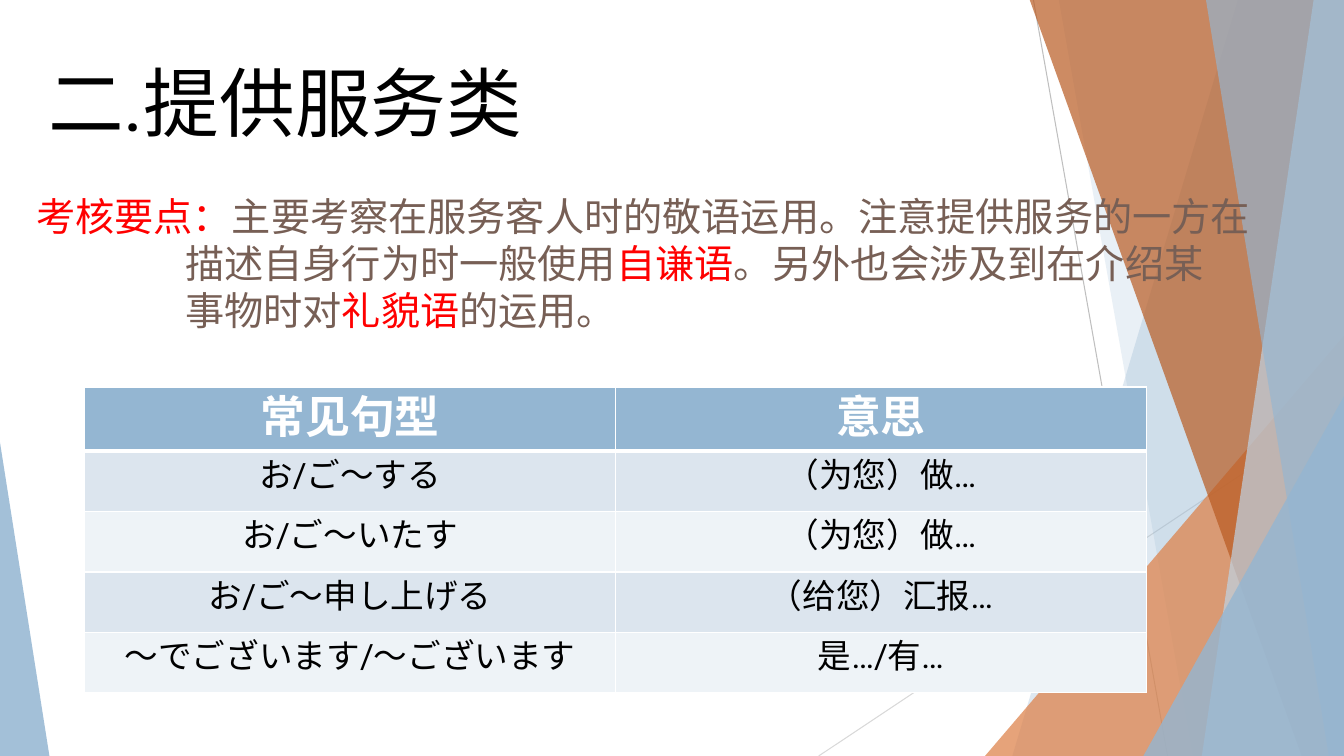
import pptx
import pptx.util
import pptx.dml.color
import pptx.enum.shapes
import pptx.enum.text
import pptx.oxml
import pptx.oxml.ns
import lxml.etree

Inches = pptx.util.Inches
Pt = pptx.util.Pt
RGBColor = pptx.dml.color.RGBColor
qn = pptx.oxml.ns.qn

WIDTH, HEIGHT, TOP = 13.33, 7.5, -0.01
FONT = "Roboto"
WHITE = RGBColor(0xFF, 0xFF, 0xFF)
BLACK = RGBColor(0, 0, 0)
RED = RGBColor(0xFF, 0, 0)
BROWN = RGBColor(0x77, 0x5F, 0x55)
BLUE = RGBColor(0x94, 0xB6, 0xD2)
PALE_BLUE = RGBColor(0xBF, 0xD3, 0xE4)
ORANGE = RGBColor(0xDD, 0x80, 0x47)
RUST = RGBColor(0xB9, 0x5B, 0x22)
GREY = RGBColor(0xBF, 0xBF, 0xBF)
LIGHT_GREY = RGBColor(0xD9, 0xD9, 0xD9)
BANDS = [RGBColor(0xDC, 0xE5, 0xEE), RGBColor(0xEE, 0xF3, 0xF7)]

# Content
TITLE = "二.提供服务类"
# Each line: left indent, then (text, colour) parts
KEY_POINTS = [
    (0, [("考核要点：", RED), ("主要考察在服务客人时的敬语运用。注意提供服务的一方在", BROWN)]),
    (1.48, [("描述自身行为时一般使用", BROWN), ("自谦语", RED),
            ("。另外也会涉及到在介绍某", BROWN)]),
    (1.48, [("事物时对", BROWN), ("礼貌语", RED), ("的运用。", BROWN)]),
]
PATTERNS = [
    ("常见句型", "意思"),
    ("お/ご～する", "（为您）做…"),
    ("お/ご～いたす", "（为您）做…"),
    ("お/ご～申し上げる", "（给您）汇报…"),
    ("～でございます/～ございます", "是…/有…"),
]

# Decoration: lines, bands to the right edge (top x, bottom x), corner triangles
LINES = [(10.25, 0, 11.58, HEIGHT, GREY), (WIDTH, 4.03, 8.12, HEIGHT, LIGHT_GREY)]
BACK_BANDS = [(12.28, 10.04, BLUE, 30), (10.5, 11.83, BLUE, 20)]
FRONT_BANDS = [(10.21, 12.91, RUST, 70), (13.03, 11.92, PALE_BLUE, 70),
               (11.96, 13.18, BLUE, 65)]
# left, top, width, apex position, colour, opacity
BACK_TRIANGLES = [(9.77, 3.33, 3.56, 1, ORANGE, 72)]
FRONT_TRIANGLES = [(11.34, 3.93, 1.99, 1, BLUE, 80), (0, 4.39, 0.49, 0, BLUE, 85)]

deck = pptx.Presentation()
deck.slide_width, deck.slide_height = Inches(WIDTH), Inches(HEIGHT)
page = deck.slides.add_slide(deck.slide_layouts[6])


def add_span(para, text, size=24, color=BLACK, bold=False):
    span = para.add_run()
    span.text = text
    span.font.size = Pt(size)
    span.font.name = FONT
    span.font.bold = bold
    span.font.color.rgb = color
    east_asian = lxml.etree.SubElement(span.font._element, qn("a:ea"))
    east_asian.set("typeface", FONT)


def add_text_box(left, top, width, height):
    box = page.shapes.add_textbox(*map(Inches, (left, top, width, height)))
    box.text_frame.word_wrap = True
    return box.text_frame


def paint(shape, color, opacity):
    shape.shadow.inherit = False
    shape.line.fill.background()
    shape.fill.solid()
    shape.fill.fore_color.rgb = color
    for tint in shape._element.spPr.iter(qn("a:srgbClr")):
        lxml.etree.SubElement(tint, qn("a:alpha")).set("val", str(opacity * 1000))


def add_bands(bands):
    for top_x, bottom_x, color, opacity in bands:
        outline = page.shapes.build_freeform(Inches(top_x), Inches(TOP))
        corners = [(WIDTH, TOP), (WIDTH, HEIGHT), (bottom_x, HEIGHT)]
        outline.add_line_segments([(Inches(x), Inches(y)) for x, y in corners])
        paint(outline.convert_to_shape(), color, opacity)


def add_triangles(triangles):
    for left, top, width, apex, color, opacity in triangles:
        shape = page.shapes.add_shape(
            pptx.enum.shapes.MSO_SHAPE.ISOSCELES_TRIANGLE,
            *map(Inches, (left, top, width, HEIGHT - top)))
        shape.adjustments[0] = apex
        paint(shape, color, opacity)


def add_border(cell, side, weight):
    edge = lxml.etree.SubElement(cell._tc.get_or_add_tcPr(), qn("a:" + side))
    edge.set("w", str(Pt(weight)))
    fill = lxml.etree.SubElement(edge, qn("a:solidFill"))
    lxml.etree.SubElement(fill, qn("a:srgbClr")).set("val", str(WHITE))


# Background decoration
for x1, y1, x2, y2, color in LINES:
    line = page.shapes.add_connector(
        pptx.enum.shapes.MSO_CONNECTOR.STRAIGHT, *map(Inches, (x1, y1, x2, y2)))
    line.line.color.rgb = color
    line.line.width = Pt(0.75)
    lxml.etree.SubElement(line._element.spPr, qn("a:effectLst"))
add_bands(BACK_BANDS)
add_triangles(BACK_TRIANGLES)
add_bands(FRONT_BANDS)
add_triangles(FRONT_TRIANGLES)

# Title
frame = add_text_box(0.38, 0.51, 5.35, 1.01)
add_span(frame.paragraphs[0], TITLE, size=54)

# Key points
frame = add_text_box(0.26, 1.86, 12.41, 1.51)
for index, (indent, parts) in enumerate(KEY_POINTS):
    para = frame.add_paragraph() if index else frame.paragraphs[0]
    if indent:
        para._p.get_or_add_pPr().set("marL", str(Inches(indent)))
    for text, color in parts:
        add_span(para, text, size=28, color=color)

# Sentence pattern table
table = page.shapes.add_table(len(PATTERNS), 2, Inches(0.84), Inches(3.84),
                              Inches(10.53), Inches(3.02)).table
for r, texts in enumerate(PATTERNS):
    header = r == 0
    table.rows[r].height = Inches(0.62 if header else 0.6)
    for c, text in enumerate(texts):
        cell = table.cell(r, c)
        for side in ("lnL", "lnR", "lnT", "lnB"):
            thick = (r, side) in ((0, "lnB"), (1, "lnT"))
            add_border(cell, side, 3 if thick else 1)
        cell.fill.solid()
        cell.fill.fore_color.rgb = BLUE if header else BANDS[(r - 1) % 2]
        para = cell.text_frame.paragraphs[0]
        para.alignment = pptx.enum.text.PP_ALIGN.CENTER
        add_span(para, text, size=32 if header else 24,
                 color=WHITE if header else BLACK, bold=header)

deck.save("out.pptx")
